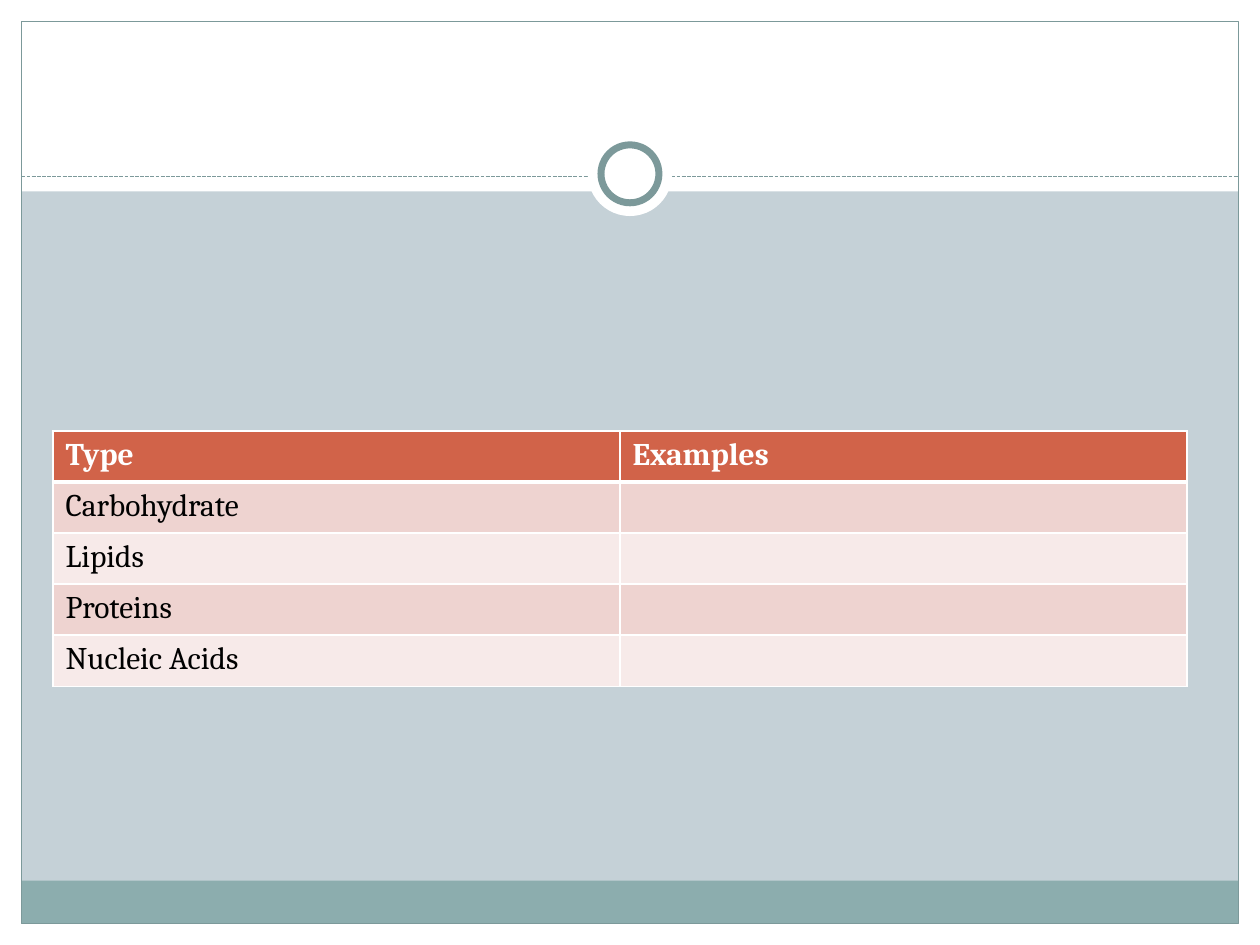
from lxml import etree
from pptx import Presentation
from pptx.dml.color import RGBColor
from pptx.enum.dml import MSO_LINE
from pptx.enum.shapes import MSO_CONNECTOR, MSO_SHAPE
from pptx.oxml.ns import qn
from pptx.util import Inches, Pt

RECT, OVAL = MSO_SHAPE.RECTANGLE, MSO_SHAPE.OVAL
STRAIGHT, DASH = MSO_CONNECTOR.STRAIGHT, MSO_LINE.SQUARE_DOT

ROWS = [
    ("Type", "Examples"),
    ("Carbohydrate", ""),
    ("Lipids", ""),
    ("Proteins", ""),
    ("Nucleic Acids", ""),
]

THEME = {
    "background": "C5D1D7", "white": "FFFFFF", "footer": "8CADAE",
    "frame": "7C999A", "header": "D16349", "bands": ("EED3D0", "F7EAE9"),
    "text": "000000", "font": "Cambria", "size": 18,
    "thin": 0.75, "ring": 4, "border": 1, "header_rule": 3,
}

WIDTH, HEIGHT, MARGIN = 10, 7.5, 0.17
HEADER_H, FOOTER_H = 1.52, 0.34
RULE_Y, RING_Y = 1.4, 1.38
TABLE_X, TABLE_Y, COL_W, ROW_H = 0.42, 3.42, 4.5, 0.405


def color(name):
    return RGBColor.from_string(THEME.get(name, name))


def add_panel(s, kind, box, fill=None, line=None, width=0):
    sp = s.shapes.add_shape(kind, *map(Inches, box))
    sp.shadow.inherit = False
    if fill:
        sp.fill.solid()
        sp.fill.fore_color.rgb = color(fill)
    else:
        sp.fill.background()
    if line:
        sp.line.color.rgb = color(line)
        sp.line.width = Pt(width)
    else:
        sp.line.fill.background()


def add_disc(s, size, **style):
    """Add a circle centred on the ring position."""
    box = ((WIDTH - size) / 2, RING_Y - size / 2, size, size)
    add_panel(s, OVAL, box, "white", **style)


def add_frame(s):
    inner_w, inner_h = WIDTH - 2 * MARGIN, HEIGHT - 2 * MARGIN
    for box in [
        (0, HEIGHT - MARGIN, WIDTH, MARGIN),
        (0, 0, WIDTH, HEADER_H),
        (0, 0, MARGIN, HEIGHT),
        (WIDTH - MARGIN, 0, MARGIN, HEIGHT),
    ]:
        add_panel(s, RECT, box, "white")
    footer_y = HEIGHT - MARGIN - FOOTER_H
    add_panel(s, RECT, (MARGIN, footer_y, inner_w, FOOTER_H), "footer")
    add_panel(s, RECT, (MARGIN, MARGIN, inner_w, inner_h),
              line="frame", width=THEME["thin"])

    ends = (MARGIN, RULE_Y, WIDTH - MARGIN, RULE_Y)
    rule = s.shapes.add_connector(STRAIGHT, *map(Inches, ends))
    rule.line.color.rgb = color("frame")
    rule.line.width = Pt(THEME["thin"])
    rule.line.dash_style = DASH
    etree.SubElement(rule._element.spPr, qn("a:effectLst"))

    add_disc(s, 0.67)
    add_disc(s, 0.46, line="frame", width=THEME["ring"])


def set_borders(cell, top, bottom):
    tcPr = cell._tc.get_or_add_tcPr()
    thin = THEME["border"]
    widths = {"lnL": thin, "lnR": thin, "lnT": top, "lnB": bottom}
    for i, (side, width) in enumerate(widths.items()):
        ln = etree.Element(qn(f"a:{side}"), w=str(Pt(width)))
        fill = etree.SubElement(ln, qn("a:solidFill"))
        etree.SubElement(fill, qn("a:srgbClr"), val=THEME["white"])
        tcPr.insert(i, ln)


def add_types_table(s):
    n_rows, n_cols = len(ROWS), len(ROWS[0])
    box = (TABLE_X, TABLE_Y, n_cols * COL_W, n_rows * ROW_H)
    table = s.shapes.add_table(n_rows, n_cols, *map(Inches, box)).table
    thin, thick = THEME["border"], THEME["header_rule"]
    for i, row in enumerate(ROWS):
        header = i == 0
        fill = "header" if header else THEME["bands"][(i - 1) % 2]
        for j, text in enumerate(row):
            cell = table.cell(i, j)
            cell.fill.solid()
            cell.fill.fore_color.rgb = color(fill)
            set_borders(cell, thick if i == 1 else thin,
                        thick if header else thin)
            if not text:
                continue
            cell.text_frame.text = text
            font = cell.text_frame.paragraphs[0].runs[0].font
            font.name, font.size = THEME["font"], Pt(THEME["size"])
            font.bold = header
            font.color.rgb = color("white" if header else "text")


def main():
    prs = Presentation()
    prs.slide_width, prs.slide_height = Inches(WIDTH), Inches(HEIGHT)
    s = prs.slides.add_slide(prs.slide_layouts.get_by_name("Blank"))
    s.background.fill.solid()
    s.background.fill.fore_color.rgb = color("background")
    add_frame(s)
    add_types_table(s)
    prs.save("out.pptx")


if __name__ == "__main__":
    main()
